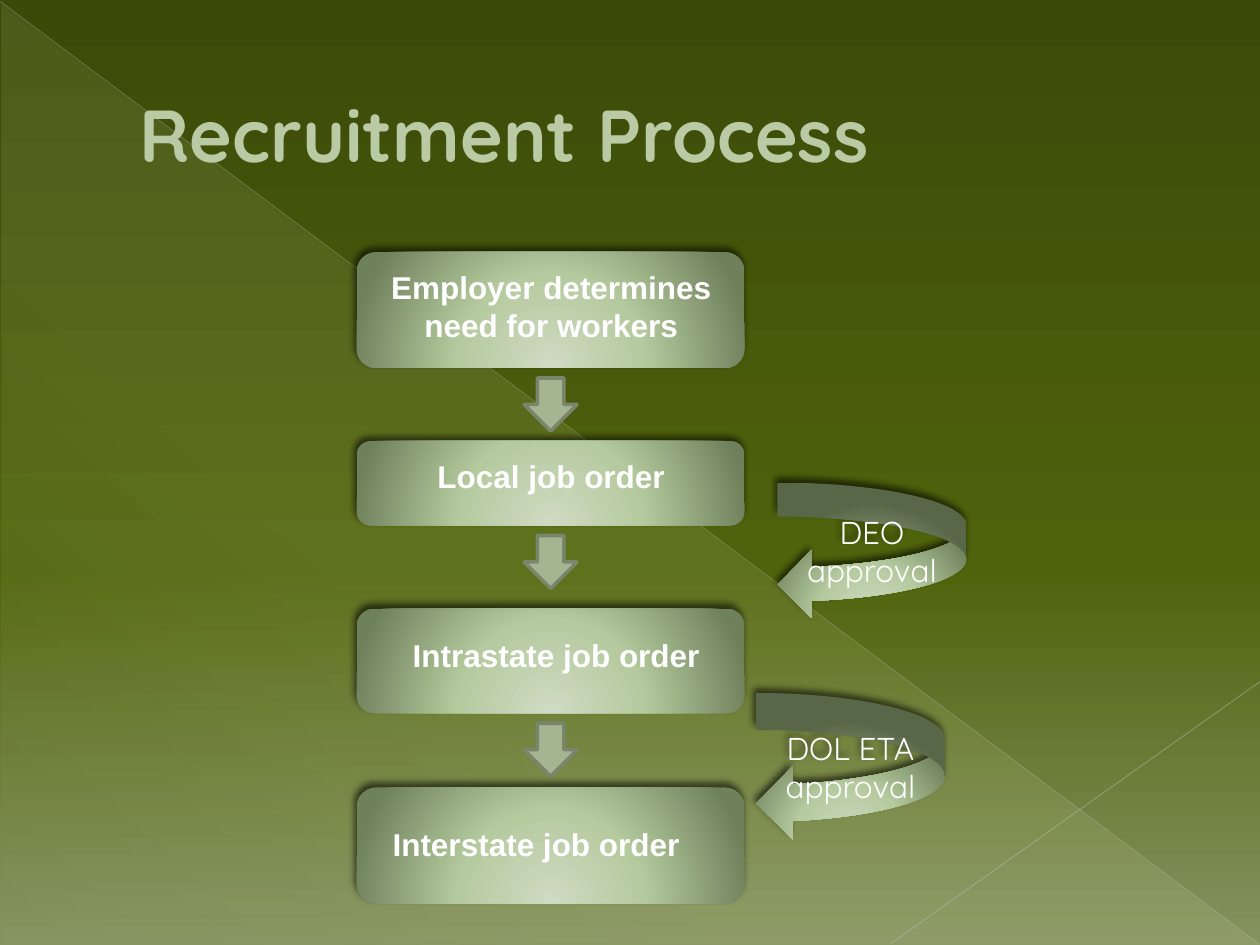
from dataclasses import dataclass

from lxml import etree
from pptx import Presentation
from pptx.dml.color import RGBColor
from pptx.enum.shapes import MSO_CONNECTOR, MSO_SHAPE
from pptx.enum.text import MSO_ANCHOR, MSO_AUTO_SIZE, PP_ALIGN
from pptx.oxml.ns import qn
from pptx.util import Inches, Pt

ROUNDED = MSO_SHAPE.ROUNDED_RECTANGLE
DOWN_ARROW = MSO_SHAPE.DOWN_ARROW
CURVED_ARROW = MSO_SHAPE.CURVED_LEFT_ARROW
TRIANGLE = MSO_SHAPE.RIGHT_TRIANGLE
STRAIGHT = MSO_CONNECTOR.STRAIGHT
LEFT, CENTER = PP_ALIGN.LEFT, PP_ALIGN.CENTER
TOP, MIDDLE = MSO_ANCHOR.TOP, MSO_ANCHOR.MIDDLE
FIT_SHAPE = MSO_AUTO_SIZE.SHAPE_TO_FIT_TEXT


@dataclass(frozen=True)
class Theme:
    # Gradient stops are (position %, colour, opacity %).
    background: tuple = ((0, "3B4A09", 100), (60, "4F630C", 100), (100, "849360", 100))
    veil: tuple = ((0, "FEFAC9", 10), (70, "FEFAC9", 8), (100, "FEFAC9", 1))
    panel: tuple = ((0, "CFDBC3", 100), (46, "B6CA9F", 100), (100, "6F815B", 100))
    title: str = "B9CAA5"
    title_outline: str = "727D65"
    text: str = "FFFFFF"
    arrow: str = "A5B592"
    arrow_line: str = "7A866C"
    shadow: str = "000000"
    title_font: str = "Quicksand"
    body_font: str = "Arial"
    title_size: int = 42
    body_size: int = 18


THEME = Theme()

STEP_LEFT, STEP_WIDTH = 2.83, 3.08
ARROW_SIZE, ARROW_GAP = 0.42, 0.08
# Step top and height, then label text and its left, top, width, height.
STEPS = (
    (2, 0.92, "Employer determines need for workers", (3, 2.08, 2.75, 0.71)),
    (3.5, 0.67, "Local job order", (3, 3.58, 2.75, 0.4)),
    (4.83, 0.83, "Intrastate job order", (3.08, 5, 2.67, 0.4)),
    (6.25, 0.92, "Interstate job order", (2.92, 6.5, 2.67, 0.4)),
)
APPROVALS = (
    ("DEO approval", (6.17, 3.83, 1.5, 1.08)),
    ("DOL ETA approval", (6, 5.5, 1.5, 1.17)),
)
# Start, end, colour, width in points, opacity %.
RAYS = (
    ((0, 0.01), (9.99, 7.49), "BABDB3", 0.39, 35),
    ((10, 5.41), (7.07, 7.49), "C1C4BC", 0.47, 45),
)


def add_node(parent, tag, **attributes):
    node = etree.SubElement(parent, qn(tag))
    for name, value in attributes.items():
        node.set(name, str(value))
    return node


def add_color(parent, color, opacity=100):
    node = add_node(parent, "a:srgbClr", val=color)
    if opacity < 100:
        add_node(node, "a:alpha", val=opacity * 1000)


def set_gradient(fill, properties, stops, angle=None):
    """Fill along angle, or as a circle rising from below if there is none."""
    fill.solid()
    gradient = etree.Element(qn("a:gradFill"), rotWithShape="1")
    stop_list = add_node(gradient, "a:gsLst")
    for position, color, opacity in stops:
        add_color(add_node(stop_list, "a:gs", pos=position * 1000), color, opacity)
    if angle is None:
        path = add_node(gradient, "a:path", path="circle")
        add_node(path, "a:fillToRect", l=50000, t=155000, r=50000, b=-55000)
    else:
        add_node(gradient, "a:lin", ang=angle * 60000, scaled=0)
    properties.replace(properties.find(qn("a:solidFill")), gradient)


def add_plain_shape(slide, kind, place):
    shape = slide.shapes.add_shape(kind, *map(Inches, place))
    shape.shadow.inherit = False
    shape.line.fill.background()
    return shape


def add_panel(slide, kind, place):
    """Add a shape with the glossy gradient and the soft shadow."""
    panel = add_plain_shape(slide, kind, place)
    properties = panel._element.spPr
    set_gradient(panel.fill, properties, THEME.panel)
    shadow = add_node(properties.find(qn("a:effectLst")), "a:outerShdw",
                      blurRad=Pt(4), dist=Pt(3), dir=245 * 60000, rotWithShape=0)
    add_color(shadow, THEME.shadow, 60)
    return panel


def write_text(shape, text, *, font=THEME.body_font, size=THEME.body_size,
               color=THEME.text, bold=False, align=CENTER, anchor=TOP):
    frame = shape.text_frame
    frame.word_wrap = True
    frame.vertical_anchor = anchor
    para = frame.paragraphs[0]
    para.alignment = align
    span = para.add_run()
    span.text = text
    span.font.name = font
    span.font.size = Pt(size)
    span.font.bold = bold
    span.font.color.rgb = RGBColor.from_string(color)
    return para


def add_text_box(slide, place, text, **style):
    box = slide.shapes.add_textbox(*map(Inches, place))
    return box, write_text(box, text, **style)


def add_title(slide):
    _, para = add_text_box(slide, (0.5, 0.29, 9, 1.53), "Recruitment Process",
                           font=THEME.title_font, size=THEME.title_size,
                           color=THEME.title, bold=True, align=LEFT, anchor=MIDDLE)
    para._p.get_or_add_pPr().set("marL", str(Inches(0.51)))
    outline = etree.Element(qn("a:ln"), w=str(Pt(0.5)))
    add_color(add_node(outline, "a:solidFill"), THEME.title_outline)
    para.runs[0]._r.get_or_add_rPr().insert(0, outline)


def add_ray(slide, start, end, color, width, opacity):
    ray = slide.shapes.add_connector(STRAIGHT, *map(Inches, start + end))
    ray.line.width = Pt(width)
    ray.line.color.rgb = RGBColor.from_string(color)
    properties = ray._element.spPr
    add_node(properties.find(".//" + qn("a:srgbClr")), "a:alpha", val=opacity * 1000)
    add_node(properties, "a:effectLst")


def add_backdrop(slide):
    fill = slide.background.fill
    fill.solid()
    set_gradient(fill, slide._element.cSld.find(".//" + qn("p:bgPr")),
                 THEME.background, angle=90)
    veil = add_plain_shape(slide, TRIANGLE, (0.01, 0.02, 9.99, 7.48))
    set_gradient(veil.fill, veil._element.spPr, THEME.veil, angle=133)
    for ray in RAYS:
        add_ray(slide, *ray)


def add_down_arrow(slide, top):
    left = STEP_LEFT + (STEP_WIDTH - ARROW_SIZE) / 2
    arrow = add_plain_shape(slide, DOWN_ARROW, (left, top, ARROW_SIZE, ARROW_SIZE))
    arrow.fill.solid()
    arrow.fill.fore_color.rgb = RGBColor.from_string(THEME.arrow)
    arrow.line.color.rgb = RGBColor.from_string(THEME.arrow_line)
    arrow.line.width = Pt(2)


def add_step(slide, top, height, text, label_place):
    add_panel(slide, ROUNDED, (STEP_LEFT, top, STEP_WIDTH, height))
    label, _ = add_text_box(slide, label_place, text, bold=True)
    label.text_frame.auto_size = FIT_SHAPE


def main():
    deck = Presentation()
    deck.slide_width, deck.slide_height = Inches(10), Inches(7.5)
    slide = deck.slides.add_slide(deck.slide_layouts[6])
    add_backdrop(slide)
    add_title(slide)
    for text, place in APPROVALS:
        arrow = add_panel(slide, CURVED_ARROW, place)
        write_text(arrow, text, font=THEME.title_font, anchor=MIDDLE)
    for step in STEPS:
        add_step(slide, *step)
    for top, height, *_ in STEPS[:-1]:
        add_down_arrow(slide, top + height + ARROW_GAP)
    deck.save("out.pptx")


if __name__ == "__main__":
    main()
